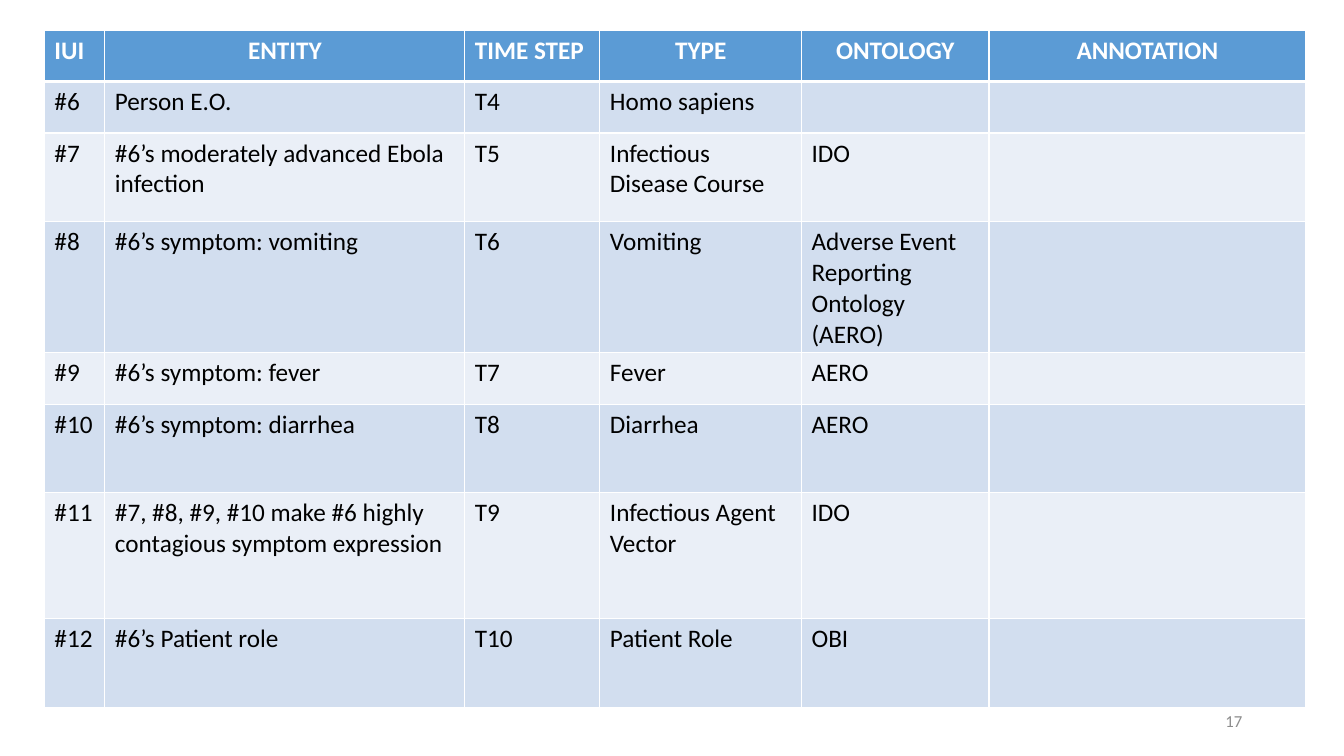
import pptx
import pptx.dml.color
import pptx.enum.text
import pptx.oxml
import pptx.oxml.ns
import pptx.util

RGBColor = pptx.dml.color.RGBColor
PP_ALIGN = pptx.enum.text.PP_ALIGN

PX = 9144
WHITE = RGBColor(0xFF, 0xFF, 0xFF)
BLACK = RGBColor(0x00, 0x00, 0x00)
GREY = RGBColor(0x8C, 0x8C, 0x8C)
HEADER_BLUE = RGBColor(0x5B, 0x9B, 0xD5)
BANDS = (RGBColor(0xEA, 0xEF, 0xF7), RGBColor(0xD2, 0xDE, 0xEF))

HEADER_FONT = {"name": "Calibri", "size": pptx.util.Pt(18), "bold": True}
BODY_FONT = {"name": "Calibri", "size": pptx.util.Pt(18), "bold": False}
NUMBER_FONT = {"name": "Calibri", "size": pptx.util.Pt(12)}

COL_WIDTHS = (60, 357, 134, 200, 186, 314)
ROW_HEIGHTS = (51, 51, 88, 125, 51, 88, 125, 88)
CENTRED_HEADERS = ("ENTITY", "TYPE", "ONTOLOGY", "ANNOTATION")
ENTITIES = (
    ("IUI", "ENTITY", "TIME STEP", "TYPE", "ONTOLOGY", "ANNOTATION"),
    ("#6", "Person E.O.", "T4", "Homo sapiens", "", ""),
    ("#7", "#6’s moderately advanced Ebola infection", "T5",
     "Infectious Disease Course", "IDO", ""),
    ("#8", "#6’s symptom: vomiting", "T6", "Vomiting",
     "Adverse Event Reporting Ontology (AERO)", ""),
    ("#9", "#6’s symptom: fever", "T7", "Fever", "AERO", ""),
    ("#10", "#6’s symptom: diarrhea", "T8", "Diarrhea", "AERO", ""),
    ("#11", "#7, #8, #9, #10 make #6 highly contagious symptom expression",
     "T9", "Infectious Agent Vector", "IDO", ""),
    ("#12", "#6’s Patient role", "T10", "Patient Role", "OBI", ""),
)


def px(*lengths):
    """Turn pixel lengths into EMU."""
    return [pptx.util.Emu(n * PX) for n in lengths]


def write(tf, text, font, color, align):
    """Write one formatted paragraph into a text frame."""
    p = tf.paragraphs[0]
    p.alignment = align
    r = p.add_run()
    r.text = text
    for key, value in font.items():
        setattr(r.font, key, value)
    r.font.color.rgb = color


def set_borders(cell, widths):
    """Give a cell white borders, with widths in points keyed by side."""
    tcPr = cell._tc.get_or_add_tcPr()
    for side, width in widths.items():
        tcPr.append(pptx.oxml.parse_xml(
            f'<a:ln{side} {pptx.oxml.ns.nsdecls("a")} w="{pptx.util.Pt(width)}">'
            f'<a:solidFill><a:srgbClr val="{WHITE}"/></a:solidFill></a:ln{side}>'))


def fill_cell(cell, text, row):
    """Set the borders, fill and text of one cell."""
    header = row == 0
    set_borders(cell, {"L": 1, "R": 1, "T": 3 if row == 1 else 1,
                       "B": 3 if header else 1})
    cell.fill.solid()
    cell.fill.fore_color.rgb = HEADER_BLUE if header else BANDS[row % 2]
    if text:
        centred = header and text in CENTRED_HEADERS
        write(cell.text_frame, text, HEADER_FONT if header else BODY_FONT,
              WHITE if header else BLACK,
              PP_ALIGN.CENTER if centred else PP_ALIGN.LEFT)


def add_entity_table(s):
    """Add the table of entities."""
    table = s.shapes.add_table(
        len(ROW_HEIGHTS), len(COL_WIDTHS),
        *px(44, 30, sum(COL_WIDTHS), sum(ROW_HEIGHTS))).table
    for col, width in zip(table.columns, px(*COL_WIDTHS)):
        col.width = width
    for row, height in zip(table.rows, px(*ROW_HEIGHTS)):
        row.height = height
    for i, texts in enumerate(ENTITIES):
        for j, text in enumerate(texts):
            fill_cell(table.cell(i, j), text, i)


def add_slide_number(s, text):
    """Add the slide number at the lower right."""
    tf = s.shapes.add_textbox(*px(942, 695, 300, 40)).text_frame
    tf.word_wrap = True
    tf.vertical_anchor = pptx.enum.text.MSO_ANCHOR.MIDDLE
    write(tf, text, NUMBER_FONT, GREY, PP_ALIGN.RIGHT)


def main():
    """Build the slide and save it."""
    prs = pptx.Presentation()
    prs.slide_width, prs.slide_height = px(1333, 750)
    s = prs.slides.add_slide(prs.slide_layouts[6])
    add_slide_number(s, "17")
    add_entity_table(s)
    prs.save("out.pptx")


if __name__ == "__main__":
    main()
